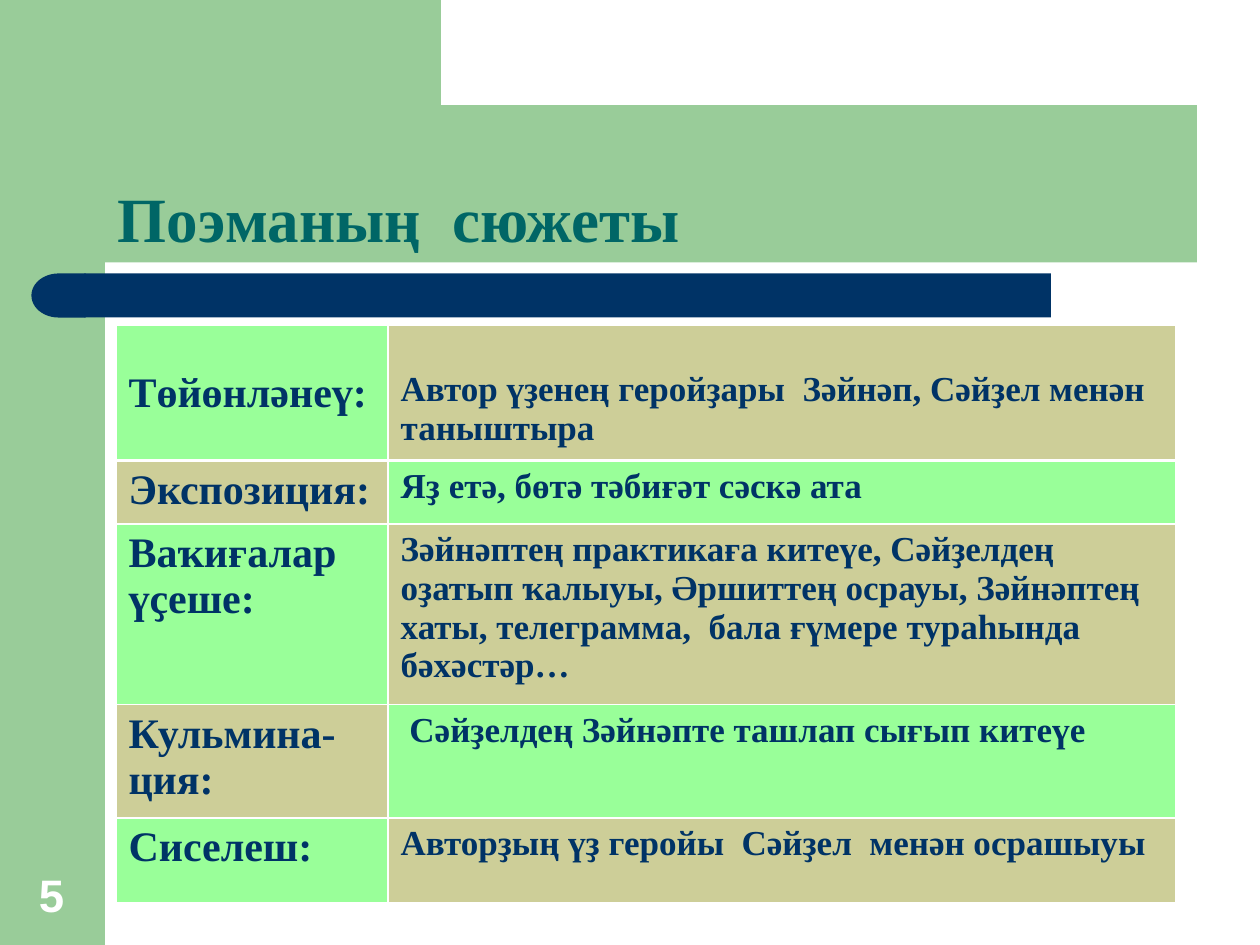
from dataclasses import dataclass

import pptx
import pptx.dml.color
import pptx.enum.shapes
import pptx.enum.text
import pptx.oxml
import pptx.oxml.ns
import pptx.util

RGBColor = pptx.dml.color.RGBColor
Shape = pptx.enum.shapes.MSO_SHAPE
Align = pptx.enum.text.PP_ALIGN
Anchor = pptx.enum.text.MSO_ANCHOR
Inches = pptx.util.Inches

SAGE = RGBColor(0x99, 0xCC, 0x99)
NAVY = RGBColor(0x00, 0x33, 0x66)
TEAL = RGBColor(0x00, 0x66, 0x66)
MINT = RGBColor(0x99, 0xFF, 0x99)
SAND = RGBColor(0xCD, 0xCE, 0x98)
WHITE = RGBColor(0xFF, 0xFF, 0xFF)

WIDTH, HEIGHT = 10, 7.5
COLUMN = WIDTH / 12  # the sidebar is one column wide
ROW = HEIGHT / 9  # the title band starts one row down
SERIF = "Times New Roman"


@dataclass(frozen=True)
class Box:
    left: float
    top: float
    width: float
    height: float

    def lengths(self) -> tuple:
        return tuple(Inches(v) for v in (self.left, self.top, self.width, self.height))


@dataclass(frozen=True)
class TextStyle:
    size: float
    color: RGBColor
    font: str = SERIF


@dataclass(frozen=True)
class PlotStage:
    label: str
    description: str
    height: float
    top_margin: float = 0.05
    indent: float = 0


TITLE_STYLE = TextStyle(36, TEAL)
NUMBER_STYLE = TextStyle(26, WHITE, "Arial")
LABEL_STYLE = TextStyle(24, NAVY)
DESCRIPTION_STYLE = TextStyle(20, NAVY)

STAGES = [
    PlotStage("Төйөнләнеү:",
              "Автор үҙенең геройҙары  Зәйнәп, Сәйҙел менән  таныштыра",
              1.03, top_margin=0.36),
    PlotStage("Экспозиция:", "Яҙ етә, бөтә тәбиғәт сәскә ата", 0.47),
    PlotStage("Ваҡиғалар үҫеше:",
              "Зәйнәптең практикаға китеүе, Сәйҙелдең оҙатып ҡалыуы, "
              "Әршиттең осрауы, Зәйнәптең хаты, телеграмма,  бала ғүмере "
              "тураһында бәхәстәр…", 1.33),
    PlotStage("Кульмина-ция:", "Сәйҙелдең Зәйнәпте ташлап сығып китеүе",
              0.84, indent=0.07),
    PlotStage("Сиселеш:", "Авторҙың үҙ геройы  Сәйҙел  менән осрашыуы", 0.67),
]
TABLE_COLUMNS = (2.16, 6.25)


def paint(shape, color: RGBColor) -> None:
    shape.shadow.inherit = False
    shape.fill.solid()
    shape.fill.fore_color.rgb = color
    shape.line.fill.background()


def add_block(slide, kind, box: Box, color: RGBColor):
    shape = slide.shapes.add_shape(kind, *box.lengths())
    paint(shape, color)
    return shape


def write(text_frame, text: str, style: TextStyle, align=Align.LEFT):
    text_frame.word_wrap = True
    paragraph = text_frame.paragraphs[0]
    paragraph.alignment = align
    run = paragraph.add_run()
    run.text = text
    run.font.name = style.font
    run.font.size = pptx.util.Pt(style.size)
    run.font.bold = True
    run.font.color.rgb = style.color
    return paragraph


def add_borders(cell, heavy_side: str) -> None:
    properties = cell._tc.get_or_add_tcPr()
    for position, side in enumerate(("lnL", "lnR", "lnT", "lnB")):
        points = 2 if side == heavy_side else 1
        properties.insert(position, pptx.oxml.parse_xml(
            f'<a:{side} {pptx.oxml.ns.nsdecls("a")} w="{points * 12700}">'
            f'<a:solidFill><a:srgbClr val="{WHITE}"/></a:solidFill></a:{side}>'))


def add_plot_table(slide, left: float, top: float) -> None:
    box = Box(left, top, sum(TABLE_COLUMNS), sum(stage.height for stage in STAGES))
    table = slide.shapes.add_table(
        len(STAGES), len(TABLE_COLUMNS), *box.lengths()).table
    for column, width in zip(table.columns, TABLE_COLUMNS):
        column.width = Inches(width)
    for row_index, stage in enumerate(STAGES):
        table.rows[row_index].height = Inches(stage.height)
        contents = ((stage.label, LABEL_STYLE, 0),
                    (stage.description, DESCRIPTION_STYLE, stage.indent))
        for column_index, (text, style, indent) in enumerate(contents):
            cell = table.cell(row_index, column_index)
            cell.fill.solid()
            cell.fill.fore_color.rgb = (MINT, SAND)[(row_index + column_index) % 2]
            cell.margin_top = Inches(stage.top_margin)
            cell.margin_left = Inches(0.1 + indent)
            write(cell.text_frame, text, style)
            # The rule under the first row is heavier
            add_borders(cell, {0: "lnB", 1: "lnT"}.get(row_index, ""))


def add_backdrop(slide) -> None:
    # Sidebar
    add_block(slide, Shape.RECTANGLE, Box(0, 0, COLUMN, HEIGHT), SAGE)

    # Top corner, joining the sidebar to the title band
    builder = slide.shapes.build_freeform(Inches(0.5), 0, scale=1.0)
    corner = [(3.5, 0), (3.5, ROW), (1.16, ROW), (0.93, 0.92),
              (COLUMN, 1.16), (COLUMN, 1.28), (0.5, 1.28)]
    builder.add_line_segments([(Inches(x), Inches(y)) for x, y in corner])
    paint(builder.convert_to_shape(), SAGE)

    # Navy bar with a rounded left end
    add_block(slide, Shape.RECTANGLE, Box(0.67, 2.17, 7.67, 0.35), NAVY)
    bar_end = add_block(slide, Shape.FLOWCHART_DELAY,
                        Box(0.25, 2.17, 0.43, 0.35), NAVY)
    bar_end._element.spPr.xfrm.set("flipH", "1")


def main() -> None:
    presentation = pptx.Presentation()
    presentation.slide_width = Inches(WIDTH)
    presentation.slide_height = Inches(HEIGHT)
    slide = presentation.slides.add_slide(presentation.slide_layouts[6])
    add_backdrop(slide)

    # Slide number
    number = slide.shapes.add_textbox(*Box(0.09, 6.83, 0.64, 0.53).lengths())
    number.text_frame.vertical_anchor = Anchor.BOTTOM
    write(number.text_frame, "5", NUMBER_STYLE, Align.CENTER)

    # Title band
    title = add_block(slide, Shape.RECTANGLE,
                      Box(COLUMN, ROW, 10.4 * COLUMN, 1.5 * ROW), SAGE)
    title.text_frame.vertical_anchor = Anchor.BOTTOM
    write(title.text_frame, "Поэманың  сюжеты", TITLE_STYLE).line_spacing = 0.9

    # Stages of the plot
    add_plot_table(slide, 0.92, 2.58)
    presentation.save("out.pptx")


if __name__ == "__main__":
    main()
